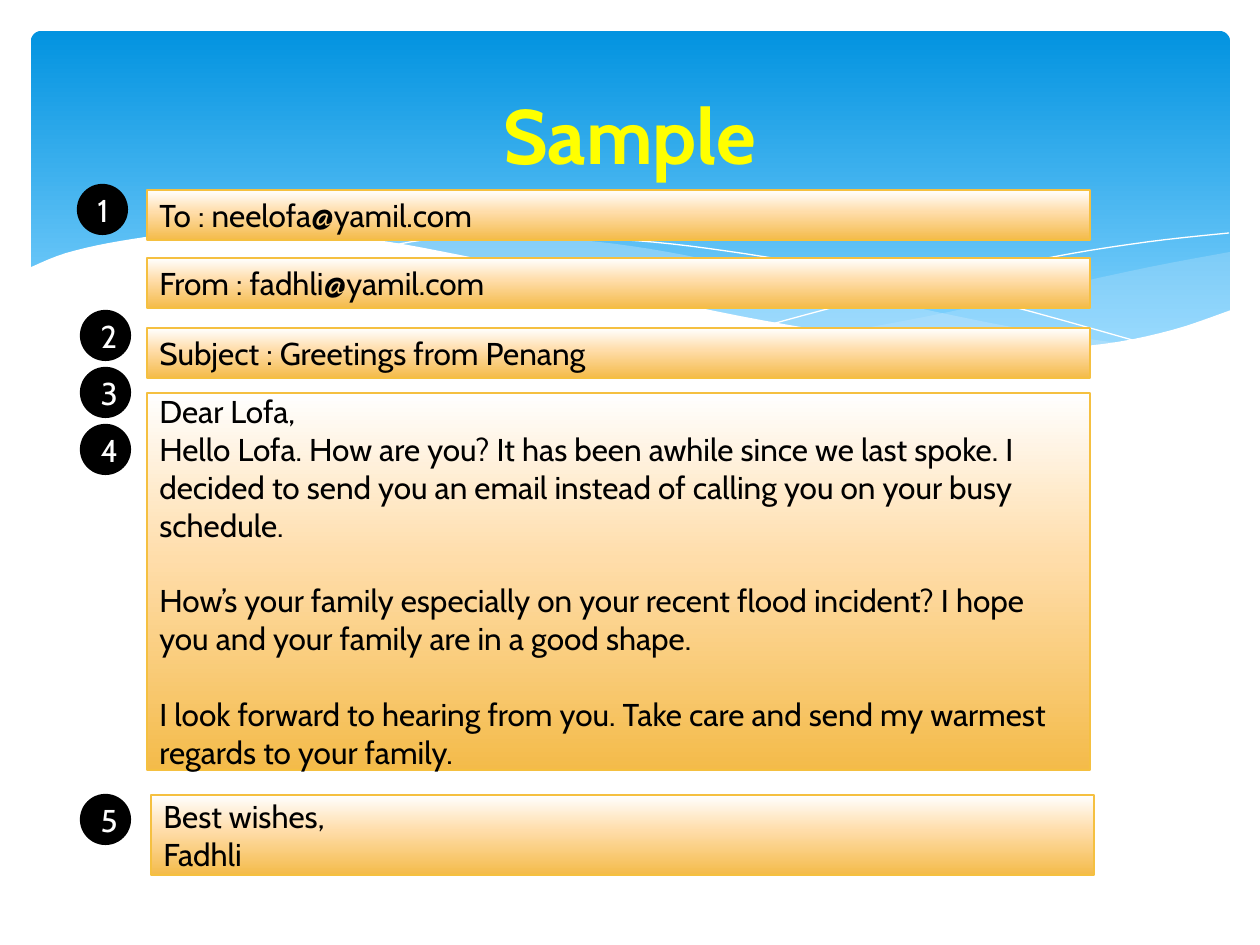
from lxml import etree
from pptx import Presentation
from pptx.dml.color import RGBColor
from pptx.enum.shapes import MSO_SHAPE
from pptx.enum.text import MSO_ANCHOR, PP_ALIGN
from pptx.oxml.ns import qn
from pptx.util import Pt

RECTANGLE, ROUNDED, OVAL = MSO_SHAPE.RECTANGLE, MSO_SHAPE.ROUNDED_RECTANGLE, MSO_SHAPE.OVAL
LEFT, CENTER, MIDDLE = PP_ALIGN.LEFT, PP_ALIGN.CENTER, MSO_ANCHOR.MIDDLE

EMU_PER_PX = 914400 / 126
SLIDE_BOX = (0, 0, 1260, 945)
COLORS = {
    "wave": "C6E7FC", "white": "FFFFFF", "black": "000000",
    "title": "FFFF00", "border": "F5C040",
}
BANNER_STOPS = [(0, "0293E0"), (90, "83D3FE")]
FIELD_STOPS = [(0, "FFFFFF"), (44, "FFDDAA"), (100, "F4BB4A")]
BODY_FONT = {"name": "Cabin", "size": Pt(18), "bold": False}
TITLE_FONT = {"name": "Cabin", "size": Pt(44), "bold": True}
BLANK_LINE = Pt(21.6)

# Waves: each outline is a list of smooth edges, joined at corners
RIGHT_WAVE = [
    [(1230, 252), (1160, 265), (1085, 281), (949, 312), (833, 334)],
    [(833, 334), (888, 341), (954, 348), (1026, 350), (1087, 347), (1150, 336),
     (1196, 324), (1230, 311)],
]
CENTER_WAVE = [
    [(1125, 344), (1017, 328), (890, 302), (793, 280), (699, 258), (616, 244),
     (529, 236), (455, 233), (360, 241)],
    [(360, 241), (431, 251), (509, 266), (566, 280), (668, 302), (757, 321),
     (857, 338), (942, 348), (1031, 350), (1125, 344)],
]
FALLING_LINE = [[(389, 246), (433, 239), (505, 236), (591, 238), (672, 244),
                 (766, 257), (876, 276), (1002, 304), (1143, 343)]]
RISING_LINE = [[(772, 324), (847, 304), (942, 281), (1053, 257), (1147, 242), (1229, 233)]]
WHITE_WAVE = [
    [(1231, 310), (1172, 330), (1103, 344), (1019, 349), (915, 343), (789, 325),
     (667, 301), (563, 277), (460, 255), (368, 239), (266, 232), (184, 233),
     (120, 241), (66, 253), (29, 268)],
    [(29, 415), (1231, 415)],
]

# Message fields: box and paragraphs as (text, space before)
FIELDS = [
    ((147, 190, 943, 50), [("To : neelofa@yamil.com", 0)]),
    ((147, 258, 943, 50), [("From : fadhli@yamil.com", 0)]),
    ((147, 328, 943, 50), [("Subject : Greetings from Penang", 0)]),
    ((147, 393, 943, 377), [
        ("Dear Lofa,", 0),
        ("Hello Lofa. How are you? It has been awhile since we last spoke. I decided "
         "to send you an email instead of calling you on your busy schedule.", 0),
        ("How’s your family especially on your recent flood incident? I hope you and "
         "your family are in a good shape.", BLANK_LINE),
        ("I look forward to hearing from you. Take care and send my warmest regards "
         "to your family.", BLANK_LINE),
    ]),
    ((151, 795, 943, 80), [("Best wishes,", 0), ("Fadhli", 0)]),
]
BADGE_SIZE = 49
BADGE_CORNERS = [(78, 185), (81, 311), (81, 368), (81, 425), (81, 795)]


def px(*lengths):
    return [round(length * EMU_PER_PX) for length in lengths]


def rgb(name):
    return RGBColor.from_string(COLORS[name])


def set_solid(fill, color):
    fill.solid()
    fill.fore_color.rgb = rgb(color)


def set_gradient(shape, stops):
    """Fill a shape from top to bottom with any number of stops."""
    shape.fill.gradient()
    gradient = shape._element.spPr.find(qn("a:gradFill"))
    for child in list(gradient):
        gradient.remove(child)
    stop_list = etree.SubElement(gradient, qn("a:gsLst"))
    for percent, color in stops:
        stop = etree.SubElement(stop_list, qn("a:gs"), pos=str(percent * 1000))
        etree.SubElement(stop, qn("a:srgbClr"), val=color)
    etree.SubElement(gradient, qn("a:lin"), ang="5400000", scaled="0")


def add_plain_shape(slide, kind, box):
    shape = slide.shapes.add_shape(kind, *px(*box))
    shape.shadow.inherit = False
    return shape


def set_text(shape, paragraphs, font_format, color, alignment):
    frame = shape.text_frame
    frame.word_wrap = True
    frame.vertical_anchor = MIDDLE
    for index, (text, space_before) in enumerate(paragraphs):
        paragraph = frame.add_paragraph() if index else frame.paragraphs[0]
        paragraph.alignment = alignment
        paragraph.space_before = space_before
        run = paragraph.add_run()
        run.text = text
        for name, value in font_format.items():
            setattr(run.font, name, value)
        run.font.color.rgb = rgb(color)


def smooth_edge(points, steps=5):
    """Sample a Catmull-Rom curve through the points."""
    if len(points) < 3:
        return points
    padded = [points[0], *points, points[-1]]
    samples = [points[0]]
    for a, b, c, d in zip(padded, padded[1:], padded[2:], padded[3:]):
        for step in range(1, steps + 1):
            t = step / steps
            samples.append(tuple(
                (2 * q + (r - p) * t + (2 * p - 5 * q + 4 * r - s) * t ** 2
                 + (3 * q - p - 3 * r + s) * t ** 3) / 2
                for p, q, r, s in zip(a, b, c, d)))
    return samples


def add_wave(slide, box, edges, color, opacity=100, outline=False):
    left, top = box[:2]
    points = [px(left + x, top + y) for edge in edges for x, y in smooth_edge(edge)]
    builder = slide.shapes.build_freeform(*points[0])
    builder.add_line_segments(points[1:], close=not outline)
    shape = builder.convert_to_shape()
    shape.shadow.inherit = False
    if outline:
        shape.fill.background()
        set_solid(shape.line.fill, color)
        shape.line.width = 0
        return
    set_solid(shape.fill, color)
    shape.line.fill.background()
    if opacity < 100:
        color_element = shape._element.spPr.find(qn("a:solidFill"))[0]
        etree.SubElement(color_element, qn("a:alpha"), val=str(opacity * 1000))


def add_backdrop(slide, box):
    left, top, width, _ = box
    banner = add_plain_shape(slide, ROUNDED, (left + 31, top + 31, width - 61, 340))
    banner.adjustments[0] = 0.03
    set_gradient(banner, BANNER_STOPS)
    banner.line.fill.background()
    add_wave(slide, box, RIGHT_WAVE, "wave", opacity=29)
    add_wave(slide, box, CENTER_WAVE, "wave", opacity=40)
    add_wave(slide, box, FALLING_LINE, "white", outline=True)
    add_wave(slide, box, RISING_LINE, "white", outline=True)
    add_wave(slide, box, WHITE_WAVE, "white")


def add_title(slide, box, text):
    title = slide.shapes.add_textbox(*px(*box))
    set_text(title, [(text, 0)], TITLE_FONT, "title", CENTER)


def add_field(slide, box, paragraphs):
    field = add_plain_shape(slide, RECTANGLE, box)
    set_gradient(field, FIELD_STOPS)
    set_solid(field.line.fill, "border")
    field.line.width = Pt(0.75)
    set_text(field, paragraphs, BODY_FONT, "black", LEFT)


def add_badge(slide, box, number):
    badge = add_plain_shape(slide, OVAL, box)
    set_solid(badge.fill, "black")
    set_solid(badge.line.fill, "black")
    badge.line.width = Pt(1.25)
    set_text(badge, [(str(number), 0)], BODY_FONT, "white", CENTER)


def main():
    presentation = Presentation()
    presentation.slide_width, presentation.slide_height = px(*SLIDE_BOX[2:])
    slide = presentation.slides.add_slide(presentation.slide_layouts[6])
    add_backdrop(slide, SLIDE_BOX)
    add_title(slide, (63, 47, 1134, 173), "Sample")
    for box, paragraphs in FIELDS:
        add_field(slide, box, paragraphs)
    for number, corner in enumerate(BADGE_CORNERS, start=1):
        add_badge(slide, (*corner, BADGE_SIZE, BADGE_SIZE), number)
    presentation.save("out.pptx")


if __name__ == "__main__":
    main()
